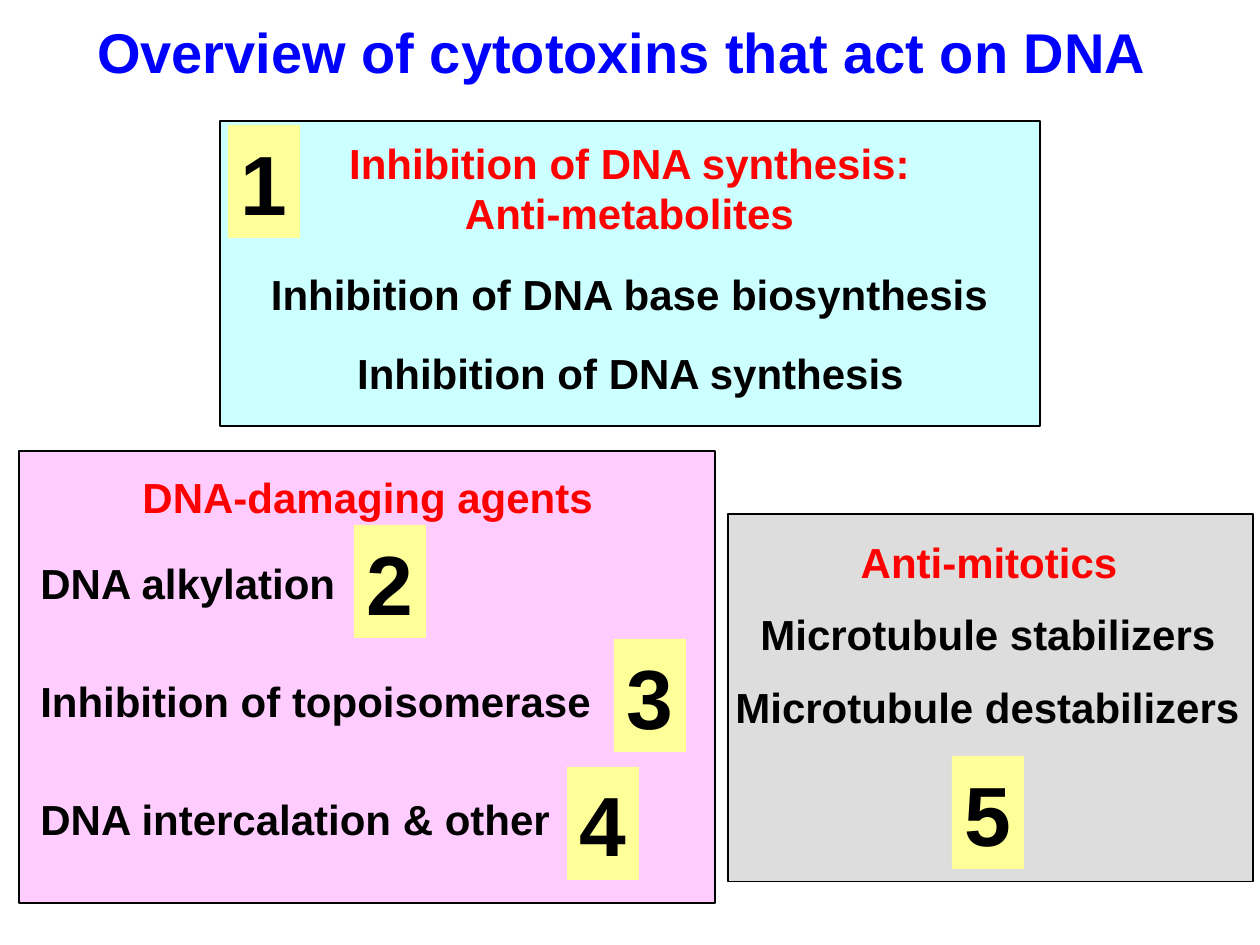
from pptx import Presentation
from pptx.dml.color import RGBColor
from pptx.enum.shapes import MSO_SHAPE as SHAPE
from pptx.enum.text import MSO_AUTO_SIZE as AUTO, PP_ALIGN as ALIGN
from pptx.util import Emu, Pt

BLACK = RGBColor(0x00, 0x00, 0x00)
RED = RGBColor(0xFF, 0x00, 0x00)
BLUE = RGBColor(0x00, 0x00, 0xFF)
CYAN = RGBColor(0xCC, 0xFF, 0xFF)
PINK = RGBColor(0xFF, 0xCC, 0xFF)
GREY = RGBColor(0xDD, 0xDD, 0xDD)
YELLOW = RGBColor(0xFF, 0xFF, 0x99)

PX = 914400 // 126
LINE_H = 63
BADGE_W, BADGE_H = 72, 113

TITLE = ("Overview of cytotoxins that act on DNA", 81, 11, 1082, 81)

PANELS = [
    {
        "box": (220, 121, 820, 305), "fill": CYAN, "align": ALIGN.CENTER,
        "heading": (["Inhibition of DNA synthesis:", "Anti-metabolites"], 336, 131, 587, 113),
        "items": [
            ("Inhibition of DNA base biosynthesis", 258, 262, 743),
            ("Inhibition of DNA synthesis", 344, 341, 573),
        ],
        "badges": [("1", 228, 125)],
    },
    {
        "box": (19, 451, 696, 452), "fill": PINK, "align": ALIGN.LEFT,
        "heading": (["DNA-damaging agents"], 130, 465, 476, LINE_H),
        "items": [
            ("DNA alkylation", 28, 551, 321),
            ("Inhibition of topoisomerase", 28, 669, 581),
            ("DNA intercalation & other", 28, 787, 537),
        ],
        "badges": [("2", 354, 525), ("3", 614, 639), ("4", 567, 767)],
    },
    {
        "box": (728, 514, 525, 368), "fill": GREY, "align": ALIGN.CENTER,
        "heading": (["Anti-mitotics"], 848, 530, 282, LINE_H),
        "items": [
            ("Microtubule stabilizers", 748, 602, 480),
            ("Microtubule destabilizers", 723, 675, 529),
        ],
        "badges": [("5", 952, 756)],
    },
]


def px(*values):
    return [Emu(v * PX) for v in values]


def add_box(slide, box, fill, outlined=False):
    s = slide.shapes.add_shape(SHAPE.RECTANGLE, *px(*box))
    s.shadow.inherit = False
    s.fill.solid()
    s.fill.fore_color.rgb = fill
    if outlined:
        s.line.color.rgb = BLACK
        s.line.width = Pt(0.75)
    else:
        s.line.fill.background()
    return s


def write(s, lines, size, color, align):
    tf = s.text_frame
    tf.word_wrap = False
    tf.auto_size = AUTO.SHAPE_TO_FIT_TEXT
    for i, line in enumerate(lines):
        p = tf.add_paragraph() if i else tf.paragraphs[0]
        p.alignment = align
        r = p.add_run()
        r.text = line
        r.font.name = "Arial"
        r.font.size = Pt(size)
        r.font.bold = True
        r.font.color.rgb = color


def add_text(slide, lines, box, size, color, align):
    write(slide.shapes.add_textbox(*px(*box)), lines, size, color, align)


def add_panel(slide, panel):
    align = panel["align"]
    add_box(slide, panel["box"], panel["fill"], outlined=True)
    lines, *box = panel["heading"]
    add_text(slide, lines, box, 24, RED, align)
    for text, x, y, w in panel["items"]:
        add_text(slide, [text], (x, y, w, LINE_H), 24, BLACK, align)
    for number, x, y in panel["badges"]:
        s = add_box(slide, (x, y, BADGE_W, BADGE_H), YELLOW)
        write(s, [number], 48, BLACK, ALIGN.CENTER)


def main():
    prs = Presentation()
    prs.slide_width, prs.slide_height = px(1260, 945)
    slide = prs.slides.add_slide(prs.slide_layouts[6])
    for panel in PANELS:
        add_panel(slide, panel)
    text, *box = TITLE
    add_text(slide, [text], box, 32, BLUE, ALIGN.CENTER)
    prs.save("out.pptx")


if __name__ == "__main__":
    main()
